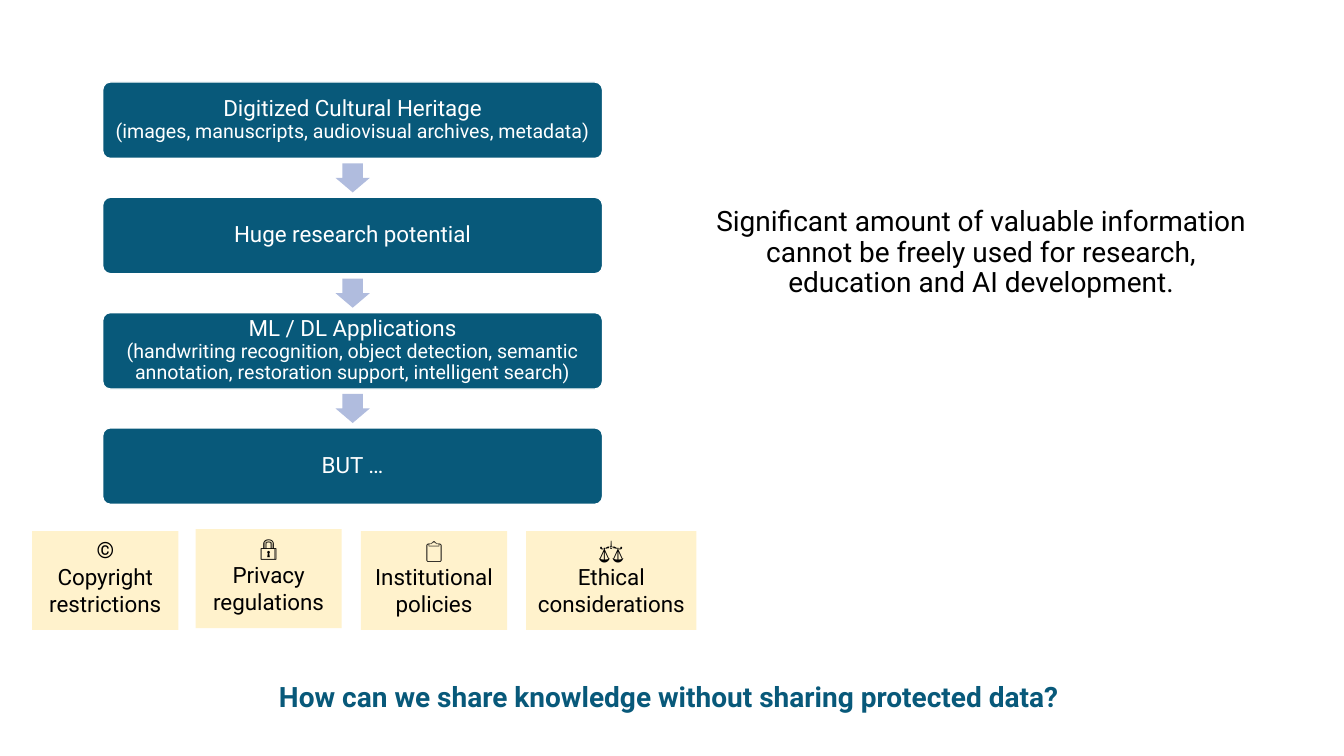
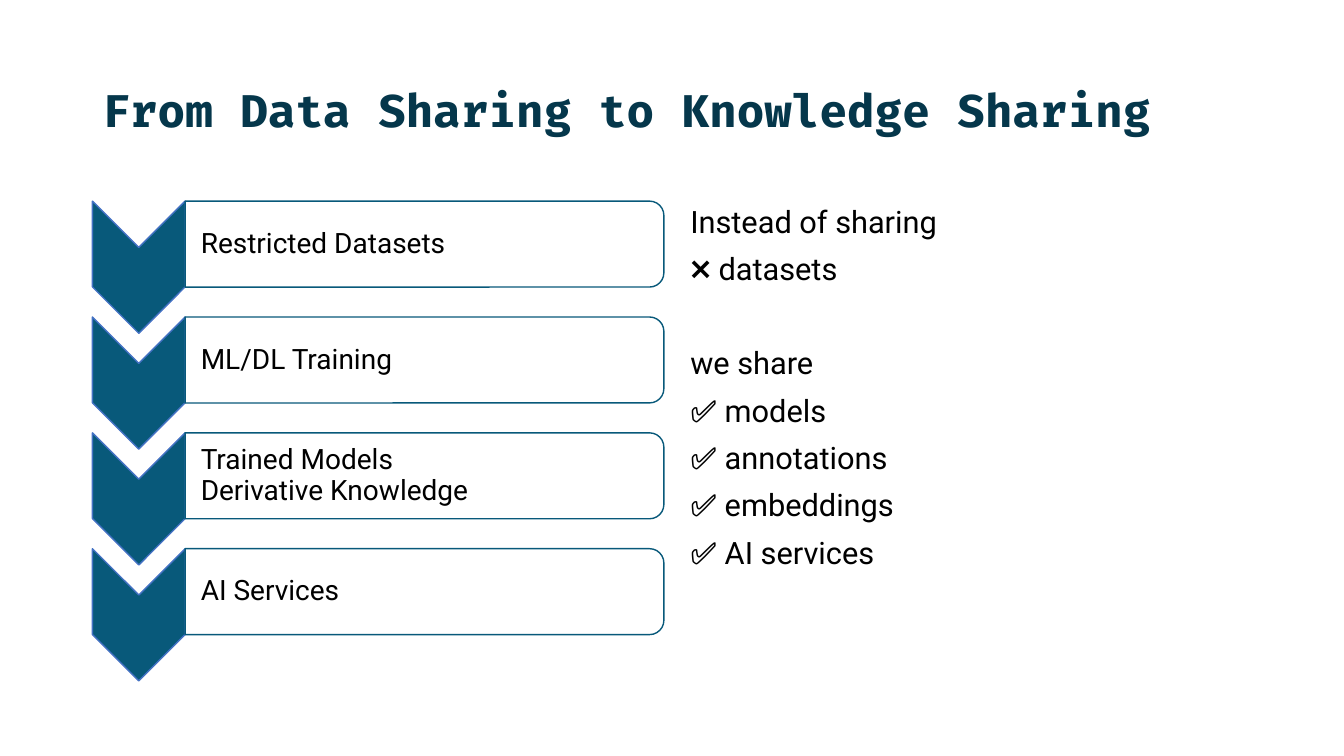
"""Build two slides on sharing knowledge instead of protected data."""
from pptx import Presentation
from pptx.dml.color import RGBColor
from pptx.enum.shapes import MSO_SHAPE as SHAPE
from pptx.enum.text import MSO_ANCHOR as ANCHOR, PP_ALIGN as ALIGN
from pptx.util import Pt

TEAL, NAVY, LILAC, CREAM = "08597A", "05374B", "B0BCDE", "FFF2CC"
BLUE, WHITE, BLACK = "4472C4", "FFFFFF", "000000"

STEPS = [
    [("Digitized Cultural Heritage", 16),
     ("(images, manuscripts, audiovisual archives, metadata)", 14)],
    [("Huge research potential", 16)],
    [("ML / DL Applications", 16),
     ("(handwriting recognition, object detection, semantic annotation, "
      "restoration support, intelligent search)", 14)],
    [("BUT …", 16)],
]
BARRIERS = [
    (23, 379.4, 104.4, ["©", "Copyright restrictions"]),
    (139.7, 378, 104.4, ["🔒", "Privacy regulations"]),
    (257.8, 379.4, 104.4, ["📋", "Institutional", "policies"]),
    (375.8, 379.4, 121.7, ["⚖️", "Ethical", "considerations"]),
]
MESSAGE = ("Significant amount of valuable information cannot be freely used "
           "for research, education and AI development.")
QUESTION = "How can we share knowledge without sharing protected data?"

TITLE = "From Data Sharing to Knowledge Sharing"
STAGES = [
    ["Restricted Datasets"],
    ["ML/DL Training"],
    ["Trained Models", "Derivative Knowledge"],
    ["AI Services"],
]
SHARED = [
    ("Instead of sharing", 0),
    ("❌ datasets", 10),
    ("we share", 43.8),
    ("✅ models", 10),
    ("✅ annotations", 10),
    ("✅ embeddings", 10),
    ("✅ AI services", 10),
]

TITLE_STYLE = {"name": "Fira Code", "size": Pt(32), "bold": True}
BODY = {"line_spacing": 0.9}
CENTRED = {"line_spacing": 0.9, "alignment": ALIGN.CENTER}


def rgb(code):
    """Turn a hex string into a colour."""
    return RGBColor.from_string(code)


def apply(target, values):
    """Set each attribute in a dict on the target."""
    for name, value in values.items():
        setattr(target, name, value)


def add_shape(s, preset, box, fill, line=None, turned=False, adj=()):
    """Draw a preset in its visible box, turned a quarter if asked."""
    x, y, w, h = box
    if turned:
        x, y, w, h = x + (w - h) / 2, y + (h - w) / 2, h, w
    sp = s.shapes.add_shape(preset, Pt(x), Pt(y), Pt(w), Pt(h))
    sp.shadow.inherit = False
    sp.rotation = 90 if turned else 0
    for i, value in enumerate(adj):
        sp.adjustments[i] = value
    sp.fill.solid()
    sp.fill.fore_color.rgb = rgb(fill)
    if line:
        sp.line.color.rgb = rgb(line)
        sp.line.width = Pt(1)
    else:
        sp.line.fill.background()
    return sp


def set_frame(sp, anchor=ANCHOR.TOP, insets=(7.2, 3.6, 7.2, 3.6)):
    """Prepare the text frame of a shape."""
    tf = sp.text_frame
    left, top, right, bottom = insets
    apply(tf, {"word_wrap": True, "vertical_anchor": anchor,
               "margin_left": Pt(left), "margin_top": Pt(top),
               "margin_right": Pt(right), "margin_bottom": Pt(bottom)})
    return tf


def write(p, lines, color, para=None, font=None):
    """Write (text, size) lines into one paragraph with line breaks."""
    apply(p, para or {})
    for i, (text, size) in enumerate(lines):
        if i:
            p.add_line_break()
        r = p.add_run()
        r.text = text
        apply(r.font, {"name": "Roboto", "size": Pt(size), **(font or {})})
        r.font.color.rgb = rgb(color)


def add_text(s, box, **frame):
    """Add a text box and return its text frame."""
    return set_frame(s.shapes.add_textbox(*map(Pt, box)), **frame)


def build_problem(s):
    """Draw the flow towards the barriers and the question."""
    x, top, w, h, pitch = 73.4, 58.6, 357, 54.6, 82.35
    arrow_w, arrow_h = 24.5, 20.8
    for i, lines in enumerate(STEPS):
        y = top + i * pitch
        sp = add_shape(s, SHAPE.ROUNDED_RECTANGLE, (x, y, w, h), TEAL, WHITE,
                       adj=[0.1])
        tf = set_frame(sp, ANCHOR.MIDDLE, (6.6,) * 4)
        write(tf.paragraphs[0], lines, WHITE, CENTRED)
        if i < len(STEPS) - 1:
            arrow = (x + (w - arrow_w) / 2, y + h + (pitch - h - arrow_h) / 2,
                     arrow_w, arrow_h)
            add_shape(s, SHAPE.RIGHT_ARROW, arrow, LILAC, turned=True,
                      adj=[0.6, 0.5])
    for x, y, w, lines in BARRIERS:
        tf = set_frame(add_shape(s, SHAPE.RECTANGLE, (x, y, w, 70.6), CREAM))
        write(tf.paragraphs[0], [(t, 16) for t in lines], BLACK,
              {"alignment": ALIGN.CENTER})
    tf = add_text(s, (496.8, 144.7, 408.2, 72.7))
    write(tf.paragraphs[0], [(MESSAGE, 20)], BLACK, CENTRED)
    tf = add_text(s, (192.2, 481.7, 609, 31.7))
    write(tf.paragraphs[0], [(QUESTION, 20)], TEAL, font={"bold": True})


def build_answer(s):
    """Draw the stages from data to services and what is shared."""
    tf = add_text(s, (66.2, 28.8, 828, 104.4), anchor=ANCHOR.MIDDLE)
    write(tf.paragraphs[0], [(TITLE, 32)], NAVY, BODY, TITLE_STYLE)
    x, top, pitch, chevron_w = 66, 143.7, 82.75, 66.2
    for i, lines in enumerate(STAGES):
        y = top + i * pitch
        add_shape(s, SHAPE.CHEVRON, (x, y, chevron_w, 94.4), TEAL, BLUE,
                  turned=True)
        box = (x + chevron_w, y, 342, 61.4)
        add_shape(s, SHAPE.ROUND_2_SAME_RECTANGLE, box, WHITE, TEAL,
                  turned=True)
        tf = add_text(s, box, anchor=ANCHOR.MIDDLE, insets=(11.2, 1, 1, 1))
        write(tf.paragraphs[0], [(t, 20) for t in lines], BLACK, BODY)
    tf = add_text(s, (486, 144, 408.2, 342.7))
    for i, (text, before) in enumerate(SHARED):
        p = tf.add_paragraph() if i else tf.paragraphs[0]
        write(p, [(text, 22)], BLACK, {**BODY, "space_before": Pt(before)})


def main():
    """Build and save the deck."""
    prs = Presentation()
    apply(prs, {"slide_width": Pt(960), "slide_height": Pt(540)})
    for build in (build_problem, build_answer):
        build(prs.slides.add_slide(prs.slide_layouts[6]))
    prs.save("out.pptx")


if __name__ == "__main__":
    main()
